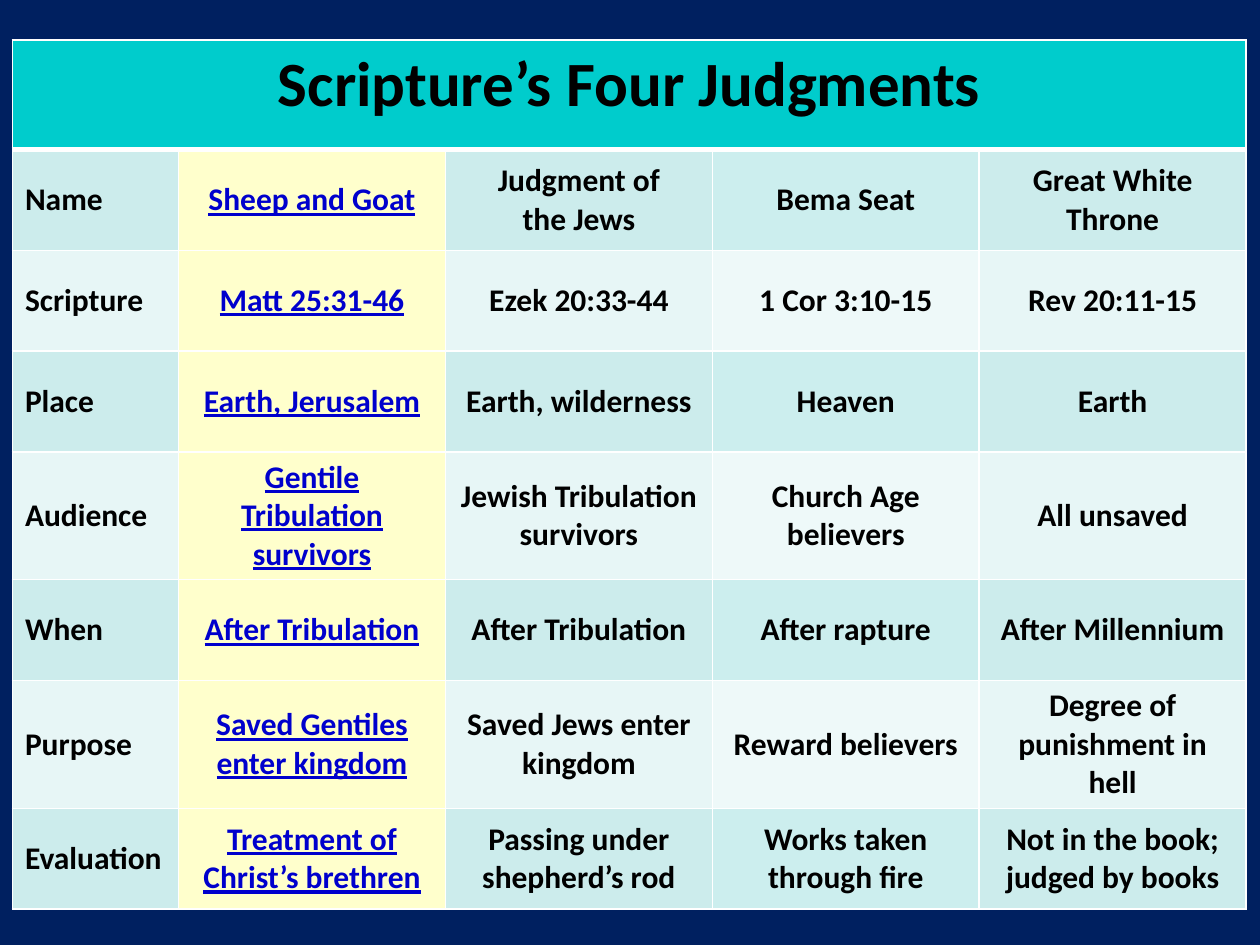
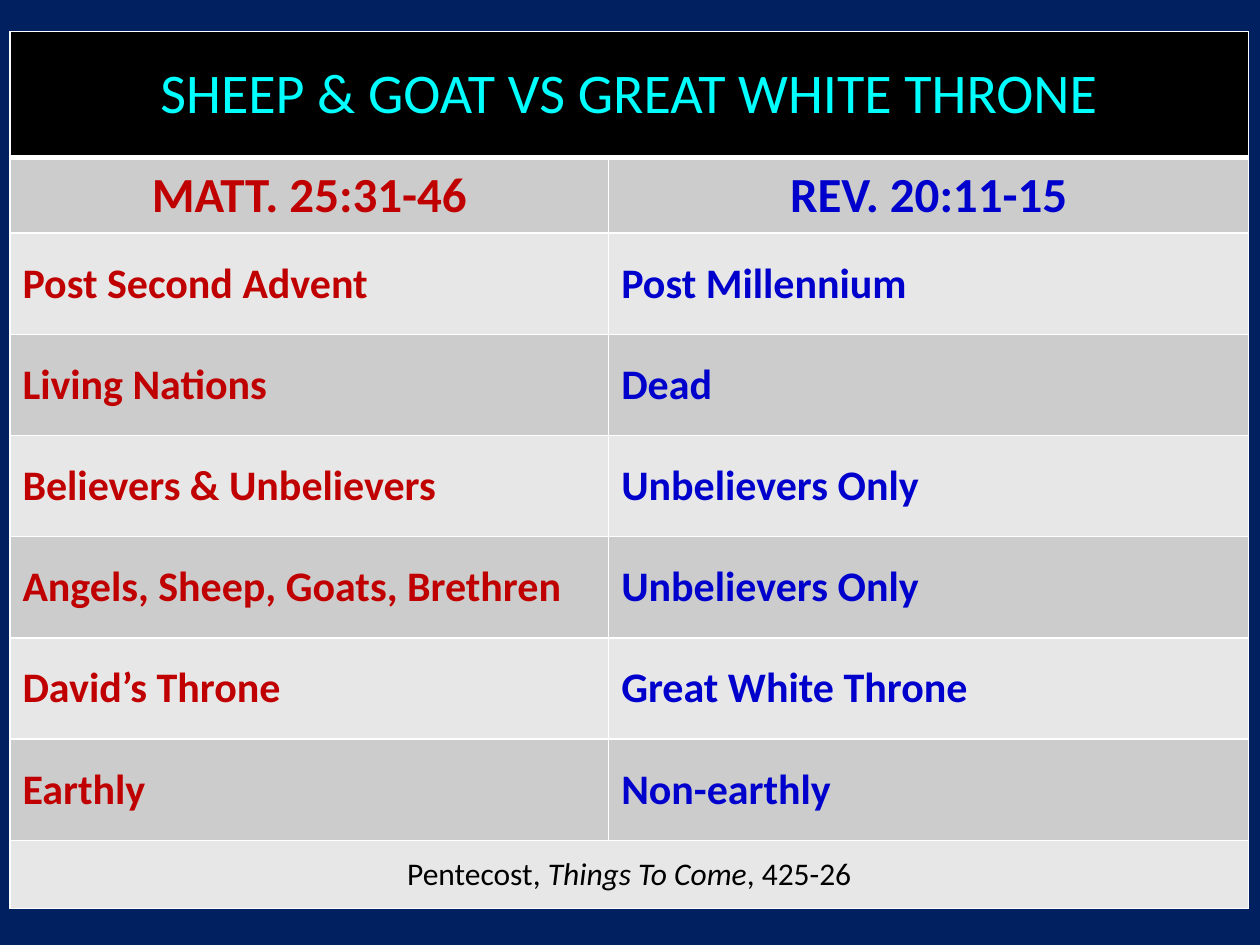
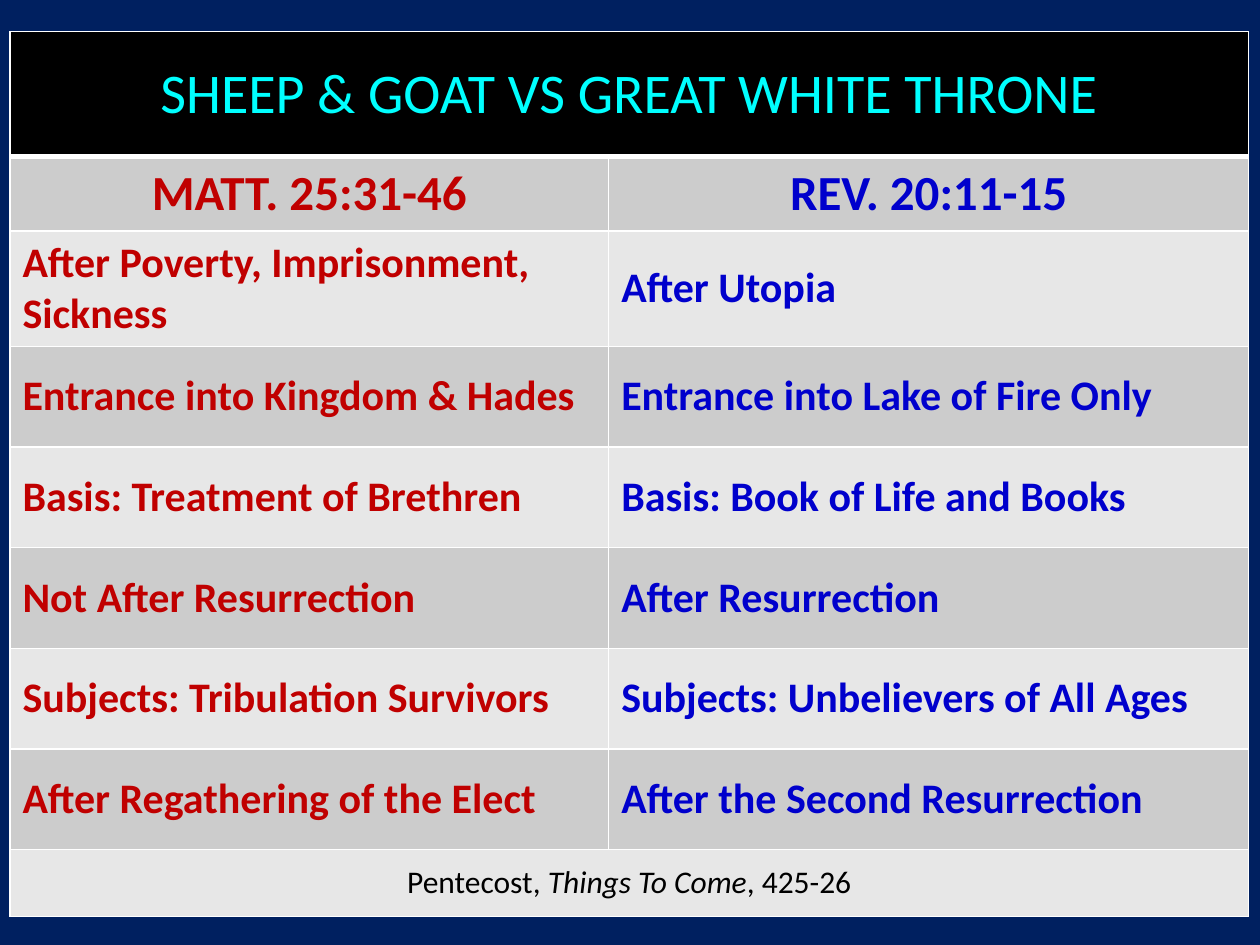
from dataclasses import dataclass
from typing import Callable, Optional

import pptx
import pptx.dml.color
import pptx.enum.text
import pptx.oxml
import pptx.oxml.ns
import pptx.util
from pptx.util import Cm

ALIGN = pptx.enum.text.PP_ALIGN
ANCHOR = pptx.enum.text.MSO_ANCHOR


@dataclass(frozen=True)
class Theme:
    font: str = "Calibri"
    background: str = "002060"
    rule: str = "FFFFFF"
    ink: str = "000000"
    blue: str = "0000CC"
    red: str = "C00000"
    cyan: str = "00FFFF"
    teal: str = "00CCCC"
    highlight: str = "FFFFCC"
    teal_bands: tuple[str, str] = ("CCECEC", "E7F6F6")
    bright_bands: tuple[str, str] = ("CCEEEE", "EEF9F9")
    grey_bands: tuple[str, str] = ("CCCCCC", "E7E7E7")
    overview_title_size: int = 36
    contrast_title_size: int = 32
    heading_size: int = 28
    entry_size: int = 24
    small_size: int = 18
    rule_width: float = 1
    title_rule_width: float = 3


THEME = Theme()


@dataclass(frozen=True)
class CellStyle:
    fill: str
    size: int
    color: str = THEME.ink
    bold: bool = True
    underline: Optional[bool] = None
    align: ALIGN = ALIGN.CENTER
    anchor: ANCHOR = ANCHOR.MIDDLE


@dataclass(frozen=True)
class Grid:
    left: float
    top: float
    columns: tuple[float, ...]
    rows: tuple[float, ...]


@dataclass(frozen=True)
class Contrast:
    entries: tuple[tuple[str, str], ...]
    row_heights: tuple[float, ...]


StyleRule = Callable[[int, int], CellStyle]

JUDGMENTS = (
    ("Scripture’s Four Judgments",),
    ("Name", "Sheep and Goat", "Judgment of\nthe Jews", "Bema Seat", "Great White Throne"),
    ("Scripture", "Matt 25:31-46", "Ezek 20:33-44", "1 Cor 3:10-15", "Rev 20:11-15"),
    ("Place", "Earth, Jerusalem", "Earth, wilderness", "Heaven", "Earth"),
    ("Audience", "Gentile Tribulation survivors", "Jewish Tribulation survivors",
     "Church Age believers", "All unsaved"),
    ("When", "After Tribulation", "After Tribulation", "After rapture", "After Millennium"),
    ("Purpose", "Saved Gentiles enter kingdom", "Saved Jews enter kingdom",
     "Reward believers", "Degree of punishment in hell"),
    ("Evaluation", "Treatment of Christ’s brethren", "Passing under shepherd’s rod",
     "Works taken through fire", "Not in the book; judged by books"),
)
JUDGMENTS_GRID = Grid(0.25, 0.81, (3.35,) + (5.38,) * 4, (2.21,) + (2.03,) * 7)

CONTRAST_TITLE = "SHEEP & GOAT VS GREAT WHITE THRONE"
PASSAGES = ("MATT. 25:31-46", "REV. 20:11-15")
CITATION = ("Pentecost, ", "Things To Come", ", 425-26")
CONTRAST_COLUMNS = (12.07, 12.9)
CONTRASTS = (
    Contrast(
        (
            ("Post Second Advent", "Post Millennium"),
            ("Living Nations", "Dead"),
            ("Believers & Unbelievers", "Unbelievers Only"),
            ("Angels, Sheep, Goats, Brethren", "Unbelievers Only"),
            ("David’s Throne", "Great White Throne"),
            ("Earthly", "Non-earthly"),
        ),
        (2.54, 1.52) + (2.04,) * 6 + (1.37,),
    ),
    Contrast(
        (
            ("After Poverty, Imprisonment, Sickness", "After Utopia"),
            ("Entrance into Kingdom & Hades", "Entrance into Lake of Fire Only"),
            ("Basis: Treatment of Brethren", "Basis: Book of Life and Books"),
            ("Not After Resurrection", "After Resurrection"),
            ("Subjects: Tribulation Survivors", "Subjects: Unbelievers of All Ages"),
            ("After Regathering of the Elect", "After the Second Resurrection"),
        ),
        (2.52, 1.5, 2.3) + (2.03,) * 5 + (1.35,),
    ),
)


def rgb(value: str) -> pptx.dml.color.RGBColor:
    return pptx.dml.color.RGBColor.from_string(value)


def set_borders(cell, row: int) -> None:
    properties = cell._tc.get_or_add_tcPr()
    for side in "LRTB":
        under_title = (row, side) in ((0, "B"), (1, "T"))
        width = THEME.title_rule_width if under_title else THEME.rule_width
        properties.append(pptx.oxml.parse_xml(
            f'<a:ln{side} {pptx.oxml.ns.nsdecls("a")} w="{pptx.util.Pt(width)}">'
            f'<a:solidFill><a:srgbClr val="{THEME.rule}"/></a:solidFill></a:ln{side}>'
        ))


def format_cell(cell, style: CellStyle) -> None:
    cell.fill.solid()
    cell.fill.fore_color.rgb = rgb(style.fill)
    cell.vertical_anchor = style.anchor
    for paragraph in cell.text_frame.paragraphs:
        paragraph.alignment = style.align
        font = paragraph.font
        font.name = THEME.font
        font.size = pptx.util.Pt(style.size)
        font.bold = style.bold
        font.underline = style.underline
        font.color.rgb = rgb(style.color)


def add_grid(slide, grid: Grid, content: tuple[tuple[str, ...], ...], style_of: StyleRule):
    table = slide.shapes.add_table(
        len(grid.rows), len(grid.columns), Cm(grid.left), Cm(grid.top),
        Cm(sum(grid.columns)), Cm(sum(grid.rows)),
    ).table
    table.first_row = False
    table.horz_banding = False
    for column, width in zip(table.columns, grid.columns):
        column.width = Cm(width)
    for row, height in zip(table.rows, grid.rows):
        row.height = Cm(height)
    for row, texts in enumerate(content):
        for column in range(len(grid.columns)):
            set_borders(table.cell(row, column), row)
        if len(texts) == 1:
            table.cell(row, 0).merge(table.cell(row, len(grid.columns) - 1))
        for column, text in enumerate(texts):
            cell = table.cell(row, column)
            cell.text = text
            format_cell(cell, style_of(row, column))
    return table


def judgment_style(row: int, column: int) -> CellStyle:
    if row == 0:
        return CellStyle(THEME.teal, THEME.overview_title_size, anchor=ANCHOR.TOP)
    if column == 1:
        return CellStyle(THEME.highlight, THEME.small_size, THEME.blue, underline=True)
    bands = THEME.bright_bands if column == 3 else THEME.teal_bands
    align = ALIGN.LEFT if column == 0 else ALIGN.CENTER
    return CellStyle(bands[(row - 1) % 2], THEME.small_size, align=align)


def contrast_style(row: int, column: int) -> CellStyle:
    if row == 0:
        return CellStyle(THEME.ink, THEME.contrast_title_size, THEME.cyan, bold=False)
    fill = THEME.grey_bands[(row - 1) % 2]
    color = (THEME.red, THEME.blue)[column]
    if row == 1:
        return CellStyle(fill, THEME.heading_size, color)
    if row == len(PASSAGES) + len(CONTRASTS[0].entries):
        return CellStyle(fill, THEME.small_size, bold=False)
    return CellStyle(fill, THEME.entry_size, color, align=ALIGN.LEFT)


def add_contrast(slide, contrast: Contrast) -> None:
    grid = Grid(0.2, 0.64, CONTRAST_COLUMNS, contrast.row_heights)
    before, book, after = CITATION
    content = ((CONTRAST_TITLE,), PASSAGES, *contrast.entries, (before,))
    table = add_grid(slide, grid, content, contrast_style)
    citation = table.cell(len(content) - 1, 0).text_frame.paragraphs[0]
    book_run = citation.add_run()
    book_run.text = book
    book_run.font.italic = True
    citation.add_run().text = after


def main() -> None:
    presentation = pptx.Presentation()
    presentation.slide_width = Cm(25.4)
    presentation.slide_height = Cm(19.05)
    backdrop = presentation.slide_master.background.fill
    backdrop.solid()
    backdrop.fore_color.rgb = rgb(THEME.background)
    blank = presentation.slide_layouts[6]
    add_grid(presentation.slides.add_slide(blank), JUDGMENTS_GRID, JUDGMENTS, judgment_style)
    for contrast in CONTRASTS:
        add_contrast(presentation.slides.add_slide(blank), contrast)
    presentation.save("out.pptx")


if __name__ == "__main__":
    main()
